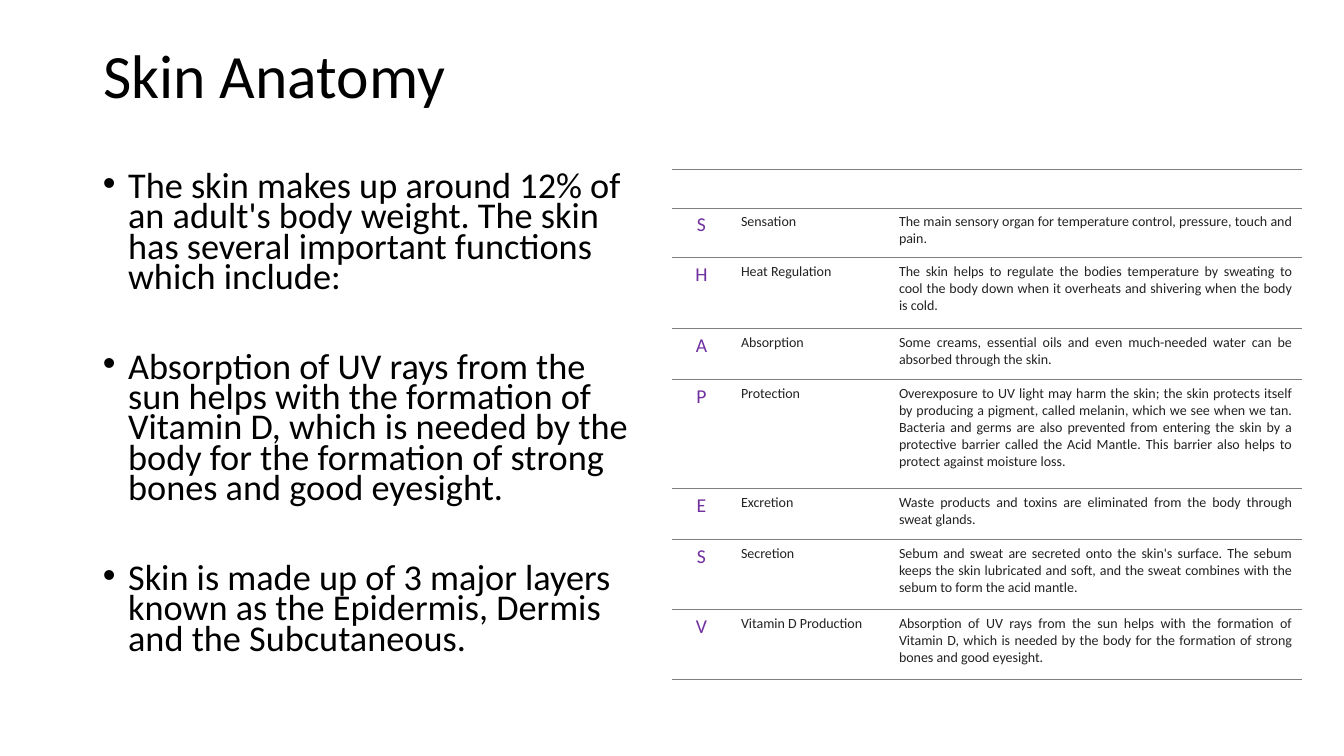
import pptx
import pptx.dml.color
import pptx.enum.text
import pptx.oxml
import pptx.oxml.ns
import pptx.util

PX = 12192000 / 1344
ALIGN = pptx.enum.text.PP_ALIGN
ANCHOR = pptx.enum.text.MSO_ANCHOR

POINTS = [
    "The skin makes up around 12% of an adult's body weight. The skin has several "
    "important functions which include:",
    "Absorption of UV rays from the sun helps with the formation of Vitamin D, which is "
    "needed by the body for the formation of strong bones and good eyesight.",
    "Skin is made up of 3 major layers known as the Epidermis, Dermis and the Subcutaneous.",
]

FUNCTIONS = [
    ("", "", ""),
    ("S", "Sensation",
     "The main sensory organ for temperature control, pressure, touch and pain."),
    ("H", "Heat Regulation",
     "The skin helps to regulate the bodies temperature by sweating to cool the body down "
     "when it overheats and shivering when the body is cold."),
    ("A", "Absorption",
     "Some creams, essential oils and even much-needed water can be absorbed through the skin."),
    ("P", "Protection",
     "Overexposure to UV light may harm the skin; the skin protects itself by producing a "
     "pigment, called melanin, which we see when we tan. Bacteria and germs are also prevented "
     "from entering the skin by a protective barrier called the Acid Mantle. This barrier also "
     "helps to protect against moisture loss."),
    ("E", "Excretion",
     "Waste products and toxins are eliminated from the body through sweat glands."),
    ("S", "Secretion",
     "Sebum and sweat are secreted onto the skin's surface. The sebum keeps the skin lubricated "
     "and soft, and the sweat combines with the sebum to form the acid mantle."),
    ("V", "Vitamin D Production", POINTS[1]),
]
COLUMN_WIDTHS = [59, 158, 413]
ROW_HEIGHTS = [39, 50, 71, 51, 109, 51, 70, 70]
COLUMN_STYLES = [
    (14, "7030A0", ALIGN.CENTER),
    (10, "222222", ALIGN.LEFT),
    (10, "222222", ALIGN.JUSTIFY),
]


def px(length):
    return pptx.util.Emu(round(length * PX))


def colour(code):
    return pptx.dml.color.RGBColor.from_string(code)


def assign(target, values):
    for name, value in values.items():
        setattr(target, name, value)


class SkinPage:
    font = "Calibri"
    ink = "000000"
    rule = "7F7F7F"

    def __init__(self, deck):
        self.page = deck.slides.add_slide(deck.slide_layouts[5])

    def place(self, box, left, top, width, height):
        assign(box, {"left": px(left), "top": px(top),
                     "width": px(width), "height": px(height)})

    def add_text(self, para, text, size, code, **layout):
        assign(para, layout)
        span = para.add_run()
        span.text = text
        assign(span.font, {"name": self.font, "size": pptx.util.Pt(size), "bold": False})
        span.font.color.rgb = colour(code)

    def title(self, text, *place):
        box = self.page.shapes.title
        self.place(box, *place)
        assign(box.text_frame, {"vertical_anchor": ANCHOR.TOP, "word_wrap": True})
        self.add_text(box.text_frame.paragraphs[0], text, 44, self.ink,
                      alignment=ALIGN.LEFT, line_spacing=0.9)

    def bullets(self, texts, *place):
        frame = self.page.shapes.add_textbox(*map(px, place)).text_frame
        frame.word_wrap = True
        for index, text in enumerate(texts):
            para = frame.add_paragraph() if index else frame.paragraphs[0]
            self.add_text(para, text, 25.9, self.ink, line_spacing=0.7,
                          space_before=pptx.util.Pt(42 if index else 10))
            # Hanging bullet
            props = para._p.get_or_add_pPr()
            props.set("marL", "228600")
            props.set("indent", "-228600")
            space = pptx.oxml.ns.nsdecls("a")
            props.append(pptx.oxml.parse_xml(f'<a:buFont {space} typeface="Arial"/>'))
            props.append(pptx.oxml.parse_xml(f'<a:buChar {space} char="•"/>'))

    def borders(self, cell):
        line = f'<a:solidFill><a:srgbClr val="{self.rule}"/></a:solidFill>'
        fills = {"lnL": "<a:noFill/>", "lnR": "<a:noFill/>", "lnT": line, "lnB": line}
        for index, (side, fill) in enumerate(fills.items()):
            cell._tc.get_or_add_tcPr().insert(index, pptx.oxml.parse_xml(
                f'<a:{side} {pptx.oxml.ns.nsdecls("a")} w="9525">{fill}</a:{side}>'))

    def table(self, rows, left, top, widths, heights):
        grid = self.page.shapes.add_table(
            len(rows), len(widths), px(left), px(top),
            px(sum(widths)), px(sum(heights))).table
        assign(grid, {"first_row": False, "horz_banding": False})
        for column, width in zip(grid.columns, widths):
            column.width = px(width)
        for row, height, texts in zip(grid.rows, heights, rows):
            row.height = px(height)
            for cell, text, (size, code, align) in zip(row.cells, texts, COLUMN_STYLES):
                cell.fill.background()
                self.borders(cell)
                if text:
                    self.add_text(cell.text_frame.paragraphs[0], text, size, code,
                                  alignment=align)
                else:
                    assign(cell, {"margin_top": 0, "margin_bottom": 0})


def main():
    deck = pptx.Presentation()
    assign(deck, {"slide_width": px(1344), "slide_height": px(756)})
    skin = SkinPage(deck)

    # Heading
    skin.title("Skin Anatomy", 93, 40, 1159, 146)
    # Key facts
    skin.bullets(POINTS, 93, 169, 548, 512)
    # Functions of the skin
    skin.table(FUNCTIONS, 672, 169, COLUMN_WIDTHS, ROW_HEIGHTS)

    deck.save("out.pptx")


if __name__ == "__main__":
    main()
